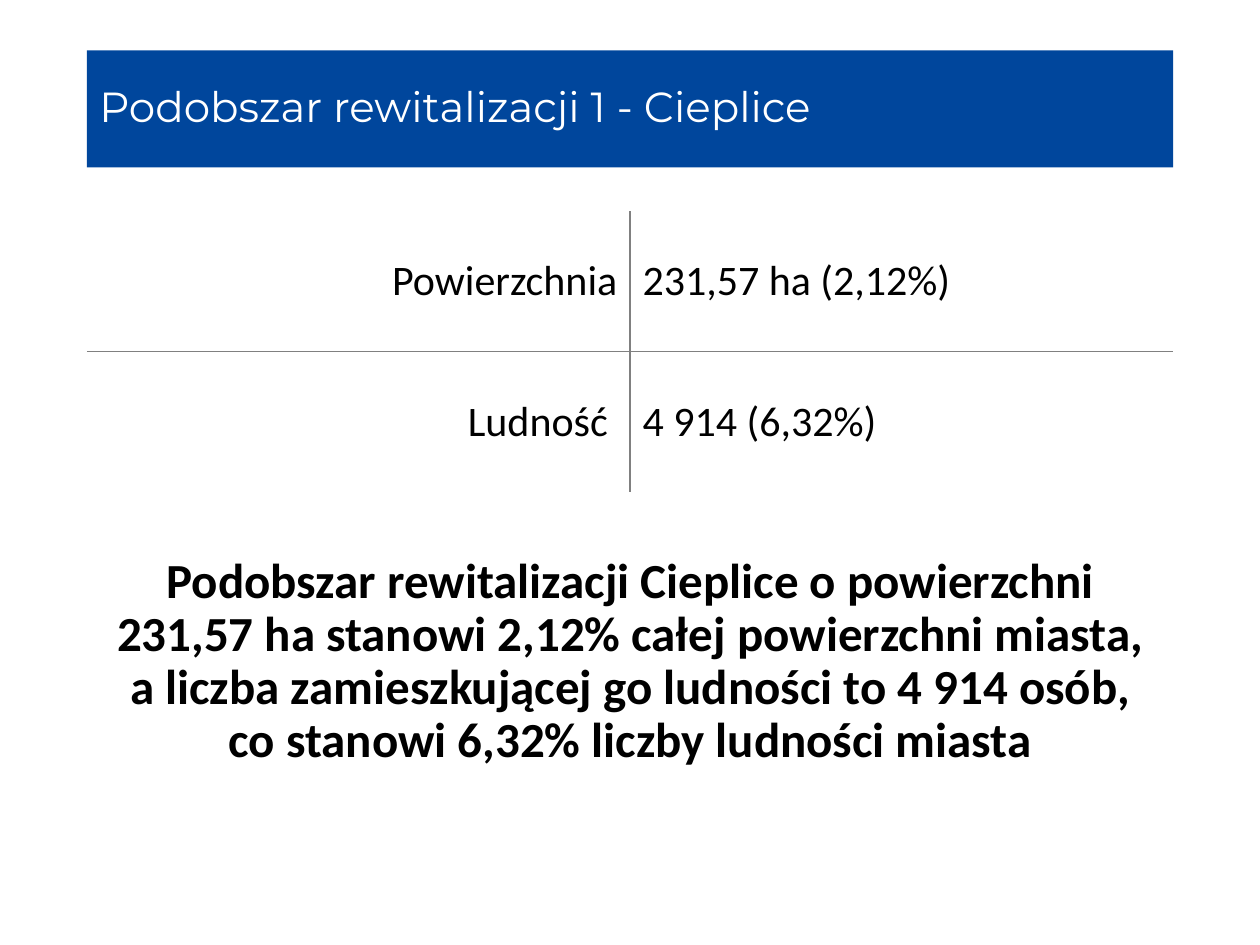
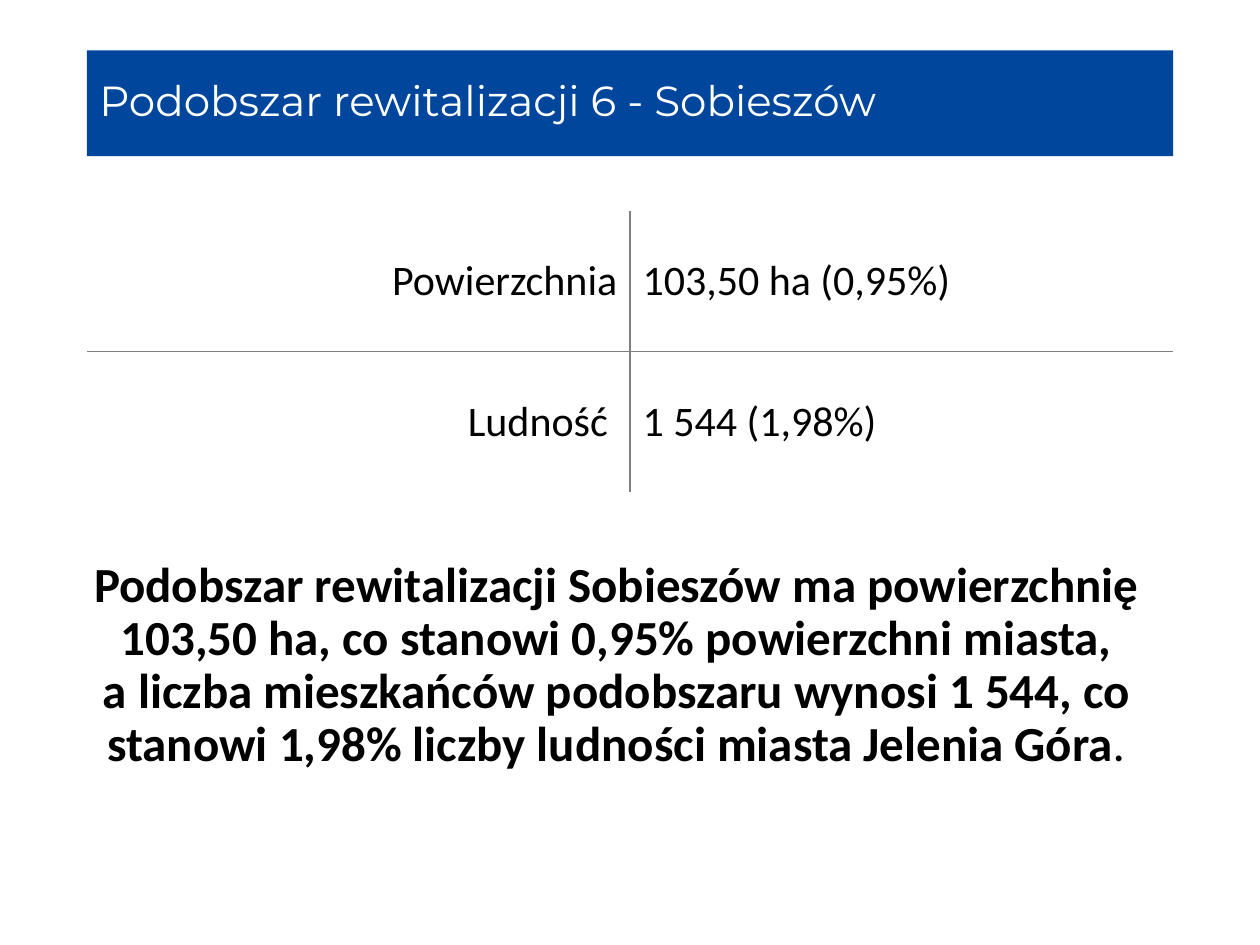
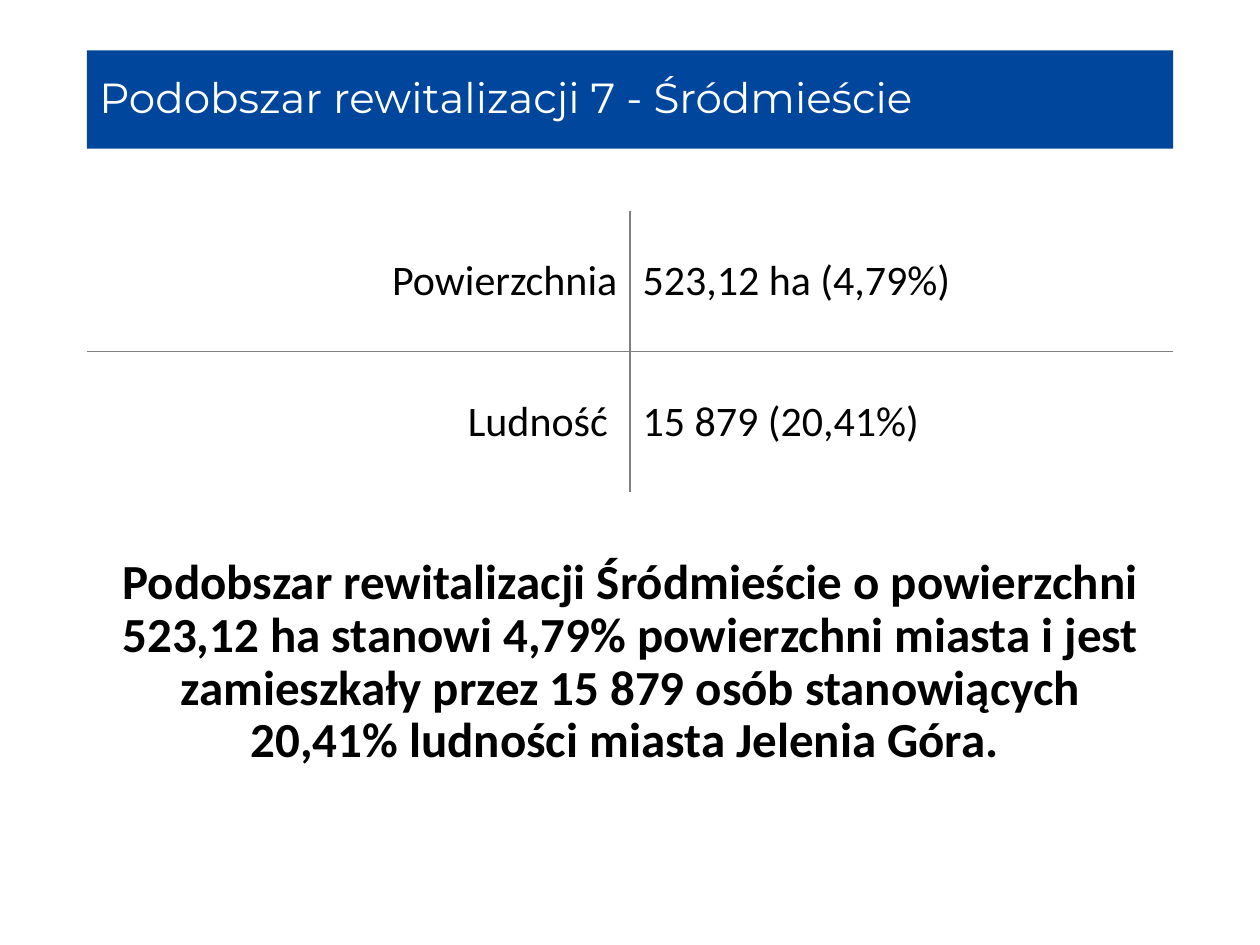
from dataclasses import dataclass

from lxml import etree
from pptx import Presentation
from pptx.dml.color import RGBColor
from pptx.enum.shapes import MSO_SHAPE
from pptx.enum.text import MSO_ANCHOR, PP_ALIGN
from pptx.oxml.ns import qn
from pptx.util import Inches, Pt

RECTANGLE = MSO_SHAPE.RECTANGLE
MIDDLE = MSO_ANCHOR.MIDDLE
LEFT, CENTER, RIGHT = PP_ALIGN.LEFT, PP_ALIGN.CENTER, PP_ALIGN.RIGHT

GRID_COLUMNS, GRID_ROWS = 100, 75
MARGIN, CONTENT_WIDTH = 6.9, 86.2
BAND_TOP = 4
FIGURES_TOP, FIGURES_HEIGHT = 16.75, 22.3
NO_STYLE_NO_GRID = "{2D5ABB26-0587-4C30-8999-92F81FD0307C}"
NBSP = chr(160)  # keeps short words and digit groups on one line


@dataclass(frozen=True)
class Theme:
    band: str = "00469C"
    band_text: str = "FFFFFF"
    text: str = "000000"
    rule: str = "808080"
    rule_width: float = 1
    title_font: str = "Montserrat"
    body_font: str = "Calibri"
    title_size: int = 24
    figure_size: int = 24
    summary_size: int = 28
    line_spacing: float = 0.9
    summary_space: int = 10


@dataclass(frozen=True)
class Subarea:
    title: str
    band_height: float
    area: str
    population: str
    summary: tuple  # (text, bold) pairs
    summary_box: tuple  # left, top, width, height in grid units


SUBAREAS = (
    Subarea(
        "Podobszar rewitalizacji 1 - Cieplice", 9.3,
        "231,57 ha (2,12%)", "4 914 (6,32%)",
        (("Podobszar rewitalizacji Cieplice o powierzchni 231,57 ha stanowi "
          f"2,12% całej powierzchni miasta, a{NBSP}liczba zamieszkującej go "
          f"ludności to 4 914 osób, co{NBSP}stanowi 6,32% liczby ludności miasta",
          True),),
        (MARGIN, 43.65, CONTENT_WIDTH, 20.4)),
    Subarea(
        "Podobszar rewitalizacji 6 - Sobieszów", 8.4,
        "103,50 ha (0,95%)", "1 544 (1,98%)",
        (("Podobszar rewitalizacji Sobieszów ma powierzchnię 103,50 ha, co "
          f"stanowi 0,95% powierzchni miasta, a{NBSP}liczba mieszkańców "
          "podobszaru wynosi 1 544, co stanowi 1,98% liczby ludności miasta "
          "Jelenia Góra", True), (".", False)),
        (5.8, 44, CONTENT_WIDTH, 18.6)),
    Subarea(
        "Podobszar rewitalizacji 7 - Śródmieście", 7.8,
        "523,12 ha (4,79%)", "15 879 (20,41%)",
        (("Podobszar rewitalizacji Śródmieście o powierzchni 523,12 ha stanowi "
          f"4,79% powierzchni miasta i jest zamieszkały przez 15{NBSP}879 osób "
          "stanowiących 20,41% ludności miasta Jelenia Góra. ", True),),
        (7.4, 43.7, 85.2, 15.2)),
)


class Deck:
    def __init__(self, theme):
        self.theme = theme
        self.presentation = Presentation()
        self.presentation.slide_width = Inches(10)
        self.presentation.slide_height = Inches(7.5)
        self.slide = None

    def new_slide(self):
        blank = self.presentation.slide_layouts[6]
        self.slide = self.presentation.slides.add_slide(blank)

    def place(self, left, top, width, height):
        """Turn grid units into slide lengths."""
        column = self.presentation.slide_width / GRID_COLUMNS
        row = self.presentation.slide_height / GRID_ROWS
        return (round(left * column), round(top * row),
                round(width * column), round(height * row))

    def style(self, paragraph, font_name, size, color, align=LEFT):
        paragraph.alignment = align
        font = paragraph.font
        font.name, font.size = font_name, Pt(size)
        font.color.rgb = RGBColor.from_string(color)

    def title_band(self, title, height):
        theme = self.theme
        band = self.slide.shapes.add_shape(
            RECTANGLE, *self.place(MARGIN, BAND_TOP, CONTENT_WIDTH, height))
        band.shadow.inherit = False
        band.fill.solid()
        band.fill.fore_color.rgb = RGBColor.from_string(theme.band)
        band.line.fill.background()
        band.text_frame.vertical_anchor = MIDDLE
        heading = band.text_frame.paragraphs[0]
        heading.text = title
        heading.line_spacing = theme.line_spacing
        self.style(heading, theme.title_font, theme.title_size, theme.band_text)

    def summary(self, parts, box):
        theme = self.theme
        frame = self.slide.shapes.add_textbox(*self.place(*box)).text_frame
        frame.word_wrap = True
        statement = frame.paragraphs[0]
        statement.line_spacing = theme.line_spacing
        statement.space_before = Pt(theme.summary_space)
        self.style(statement, theme.body_font, theme.summary_size, theme.text, CENTER)
        for text, bold in parts:
            run = statement.add_run()
            run.text = text
            run.font.bold = bold

    def rule(self, cell, side):
        """Draw one cell border; side is L, R, T or B, added in that order."""
        properties = cell._tc.get_or_add_tcPr()
        line = etree.SubElement(properties, qn(f"a:ln{side}"),
                                w=str(Pt(self.theme.rule_width)))
        fill = etree.SubElement(line, qn("a:solidFill"))
        etree.SubElement(fill, qn("a:srgbClr"), val=self.theme.rule)

    def figures(self, rows):
        """Add label and value pairs, ruled only between the cells."""
        theme = self.theme
        table = self.slide.shapes.add_table(
            len(rows), 2,
            *self.place(MARGIN, FIGURES_TOP, CONTENT_WIDTH, FIGURES_HEIGHT)).table
        table.first_row = table.horz_banding = False
        table._tbl.tblPr.find(qn("a:tableStyleId")).text = NO_STYLE_NO_GRID
        for r, row in enumerate(rows):
            for c, text in enumerate(row):
                cell = table.cell(r, c)
                cell.vertical_anchor = MIDDLE
                entry = cell.text_frame.paragraphs[0]
                entry.text = text
                self.style(entry, theme.body_font, theme.figure_size, theme.text,
                           LEFT if c else RIGHT)
                inner_sides = {"L": c > 0, "R": c == 0,
                               "T": r > 0, "B": r < len(rows) - 1}
                for side, inner in inner_sides.items():
                    if inner:
                        self.rule(cell, side)
                cell.fill.background()


def main():
    deck = Deck(Theme())
    for subarea in SUBAREAS:
        deck.new_slide()
        deck.title_band(subarea.title, subarea.band_height)
        deck.summary(subarea.summary, subarea.summary_box)
        deck.figures((("Powierzchnia", subarea.area),
                      ("Ludność ", subarea.population)))
    deck.presentation.save("out.pptx")


if __name__ == "__main__":
    main()
